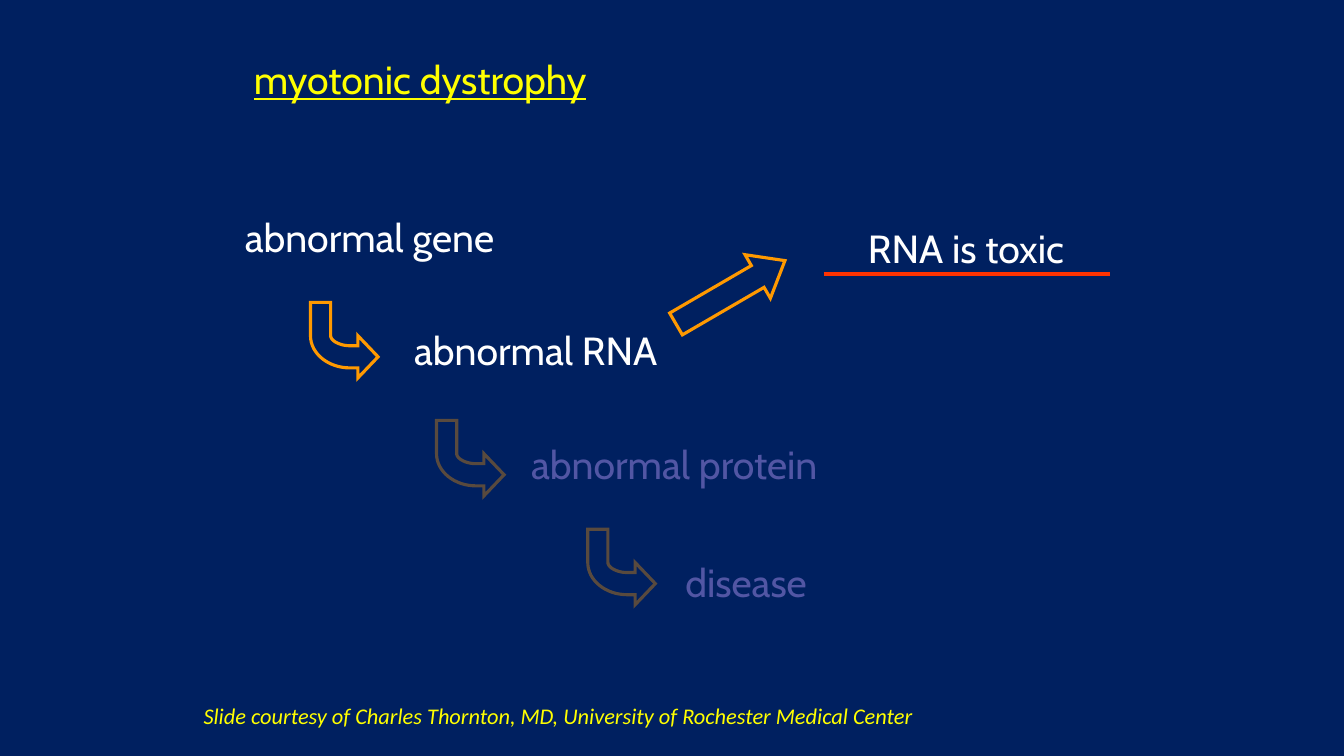
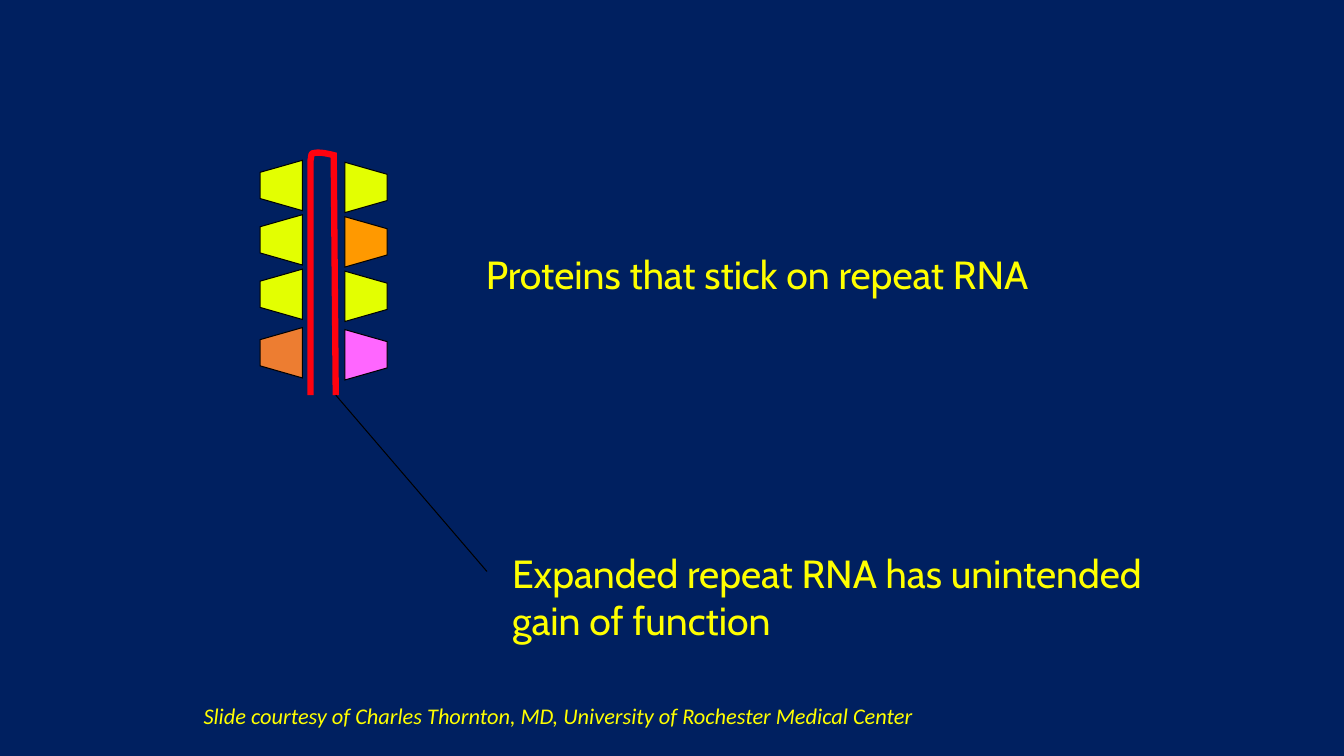
from dataclasses import dataclass

from lxml import etree
from pptx import Presentation
from pptx.dml.color import RGBColor
from pptx.enum.shapes import MSO_CONNECTOR, MSO_SHAPE
from pptx.enum.text import MSO_AUTO_SIZE, PP_ALIGN
from pptx.oxml.ns import qn
from pptx.util import Emu, Pt

STRAIGHT = MSO_CONNECTOR.STRAIGHT
RIGHT_ARROW = MSO_SHAPE.RIGHT_ARROW
FIT_SHAPE = MSO_AUTO_SIZE.SHAPE_TO_FIT_TEXT
CENTER = PP_ALIGN.CENTER

PX = 9144  # EMU; 100 px to the inch
SLIDE_SIZE = (1333, 750)
CURVE_STEPS = 16


@dataclass(frozen=True)
class Theme:
    background: str = "002060"
    white: str = "FFFFFF"
    faded: str = "5256A4"
    yellow: str = "FFFF00"
    orange: str = "FF9900"
    underline: str = "FF3300"
    rna: str = "FF020E"
    black: str = "000000"
    lime: str = "E3FF01"
    rust: str = "ED7D31"
    pink: str = "FF66FF"
    font: str = "Cabin"
    credit_font: str = "Calibri"
    body_size: int = 28
    credit_size: int = 16
    thin: float = 0.75
    arrow: float = 2.25
    rule: float = 3
    strand: float = 4.5


THEME = Theme()

CREDIT = "Slide courtesy of Charles Thornton, MD, University of Rochester Medical Center"
CREDIT_BOX = (192, 692, 925, 37)

# Text, box, colour
CASCADE = [
    ("abnormal gene", (233, 207, 277, 57), THEME.white),
    ("abnormal RNA", (401, 319, 267, 57), THEME.white),
    ("abnormal protein", (517, 432, 314, 57), THEME.faded),
    ("disease", (670, 549, 147, 57), THEME.faded),
]
# Left, top, opacity in percent
ELBOW_ARROWS = [(308, 300, 100), (433, 417, 35), (583, 525, 35)]
# A pair is a line to a point; six numbers are a Bézier curve
ELBOW_OUTLINE = [
    (67, 54), (47, 75), (47, 65), (39, 65), (18, 65, 0, 51, 0, 33), (0, 0), (20, 0),
    (20, 33), (20, 38, 29, 43, 39, 43), (47, 43), (47, 33),
]
HAIRPIN = [
    (308, 392), (308, 159), (309, 156, 308, 152, 311, 152),
    (317, 150, 331, 154, 331, 154), (333, 392),
]

# Top of the row, left colour, right colour
PROTEIN_ROWS = [
    (159, THEME.lime, THEME.lime),
    (213, THEME.lime, THEME.orange),
    (267, THEME.lime, THEME.lime),
    (325, THEME.rust, THEME.pink),
]
LEFT_INNER, RIGHT_INNER = 300, 342
PROTEIN_DEPTH, PROTEIN_HEIGHT, PROTEIN_TAPER = 42, 50, 12
RIGHT_DROP = 2


def to_emu(*lengths):
    return [Emu(round(length * PX)) for length in lengths]


def rgb(value):
    return RGBColor.from_string(value)


def style_line(line, color, width, opacity=100):
    line.color.rgb = rgb(color)
    line.width = Pt(width)
    properties = line._get_or_add_ln()
    if opacity < 100:
        color_element = properties.find(f".//{qn('a:srgbClr')}")
        etree.SubElement(color_element, qn("a:alpha"), val=str(opacity * 1000))
    etree.SubElement(properties, qn("a:miter"), lim="800000")


def style_shape(shape, color, width, fill=None, opacity=100):
    shape.shadow.inherit = False
    if fill:
        shape.fill.solid()
        shape.fill.fore_color.rgb = rgb(fill)
    else:
        shape.fill.background()
    style_line(shape.line, color, width, opacity)


def add_text(slide, text, box, color, size=THEME.body_size, name=THEME.font, wrap=False):
    text_box = slide.shapes.add_textbox(*to_emu(*box))
    frame = text_box.text_frame
    frame.word_wrap = wrap
    frame.auto_size = FIT_SHAPE
    paragraph = frame.paragraphs[0]
    paragraph.text = text
    paragraph.font.size = Pt(size)
    paragraph.font.name = name
    paragraph.font.color.rgb = rgb(color)
    return paragraph


def flatten(outline):
    """Turn an outline with Bézier curves into plain points."""
    points = [outline[0]]
    for segment in outline[1:]:
        if len(segment) == 2:
            points.append(segment)
            continue
        controls = [points[-1], segment[:2], segment[2:4], segment[4:]]
        for step in range(1, CURVE_STEPS + 1):
            t = step / CURVE_STEPS
            weights = ((1 - t) ** 3, 3 * t * (1 - t) ** 2, 3 * t * t * (1 - t), t ** 3)
            points.append(tuple(
                sum(weight * point[axis] for weight, point in zip(weights, controls))
                for axis in (0, 1)
            ))
    return points


def add_outline(slide, outline, left=0, top=0, close=True):
    points = [to_emu(left + x, top + y) for x, y in flatten(outline)]
    builder = slide.shapes.build_freeform(*points[0])
    builder.add_line_segments(points[1:], close=close)
    return builder.convert_to_shape()


def add_line(slide, start, end, color, width):
    connector = slide.shapes.add_connector(STRAIGHT, *to_emu(*start, *end))
    style_line(connector.line, color, width)
    etree.SubElement(connector._element.spPr, qn("a:effectLst"))


def add_slide(presentation):
    """Add a blank slide with the shared credit line."""
    slide = presentation.slides.add_slide(presentation.slide_layouts[6])
    credit = add_text(slide, CREDIT, CREDIT_BOX, THEME.yellow,
                      THEME.credit_size, THEME.credit_font, wrap=True)
    credit.font.italic = True
    return slide


def build_cascade(presentation):
    slide = add_slide(presentation)
    title = add_text(slide, "myotonic dystrophy", (242, 50, 357, 57), THEME.yellow)
    title.font.underline = True
    for text, box, color in CASCADE:
        add_text(slide, text, box, color)
    for left, top, opacity in ELBOW_ARROWS:
        elbow = add_outline(slide, ELBOW_OUTLINE, left, top)
        style_shape(elbow, THEME.orange, THEME.arrow, opacity=opacity)

    arrow = slide.shapes.add_shape(RIGHT_ARROW, *to_emu(662, 265, 125, 50))
    arrow.adjustments[0], arrow.adjustments[1] = 0.5, 0.625
    arrow.rotation = 329.8
    style_shape(arrow, THEME.orange, THEME.arrow)

    conclusion = add_text(slide, "RNA is toxic", (845, 208, 226, 61), THEME.white)
    conclusion.alignment = CENTER
    conclusion.line_spacing = 1.2
    add_line(slide, (817, 272), (1101, 272), THEME.underline, THEME.rule)


def add_protein(slide, inner, outer, top, fill):
    bottom = top + PROTEIN_HEIGHT
    outline = [(inner, top), (outer, top + PROTEIN_TAPER),
               (outer, bottom - PROTEIN_TAPER), (inner, bottom)]
    style_shape(add_outline(slide, outline), THEME.black, THEME.thin, fill)


def build_hairpin(presentation):
    slide = add_slide(presentation)
    for top, left_fill, right_fill in PROTEIN_ROWS:
        add_protein(slide, LEFT_INNER, LEFT_INNER - PROTEIN_DEPTH, top, left_fill)
        add_protein(slide, RIGHT_INNER, RIGHT_INNER + PROTEIN_DEPTH,
                    top + RIGHT_DROP, right_fill)
    strand = add_outline(slide, HAIRPIN, close=False)
    style_shape(strand, THEME.rna, THEME.strand)
    add_line(slide, HAIRPIN[-1], (483, 567), THEME.black, THEME.thin)
    add_text(slide, "Proteins that stick on repeat RNA", (472, 243, 595, 57), THEME.yellow)
    add_text(slide, "Expanded repeat RNA has unintended gain of function",
             (498, 540, 651, 104), THEME.yellow, wrap=True)


def main():
    presentation = Presentation()
    presentation.slide_width, presentation.slide_height = to_emu(*SLIDE_SIZE)
    background = presentation.slide_master.background.fill
    background.solid()
    background.fore_color.rgb = rgb(THEME.background)
    build_cascade(presentation)
    build_hairpin(presentation)
    presentation.save("out.pptx")


if __name__ == "__main__":
    main()
